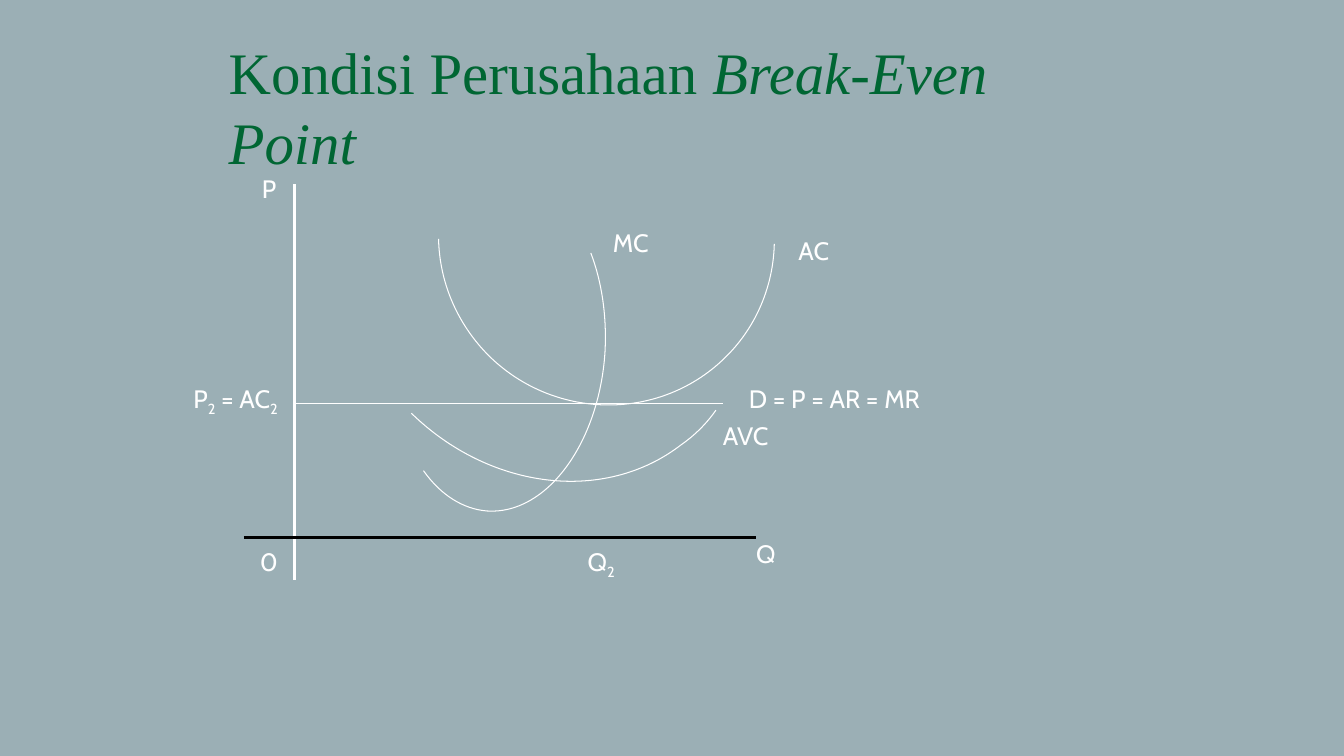
"""Draws the break-even point of a firm: cost curves, price line and axes."""
from lxml import etree
from pptx import Presentation, util as u
from pptx.dml.color import RGBColor
from pptx.enum import shapes, text
from pptx.oxml.ns import qn

WHITE = RGBColor(0xFF, 0xFF, 0xFF)
BLACK = RGBColor(0x00, 0x00, 0x00)
GREEN = RGBColor(0x00, 0x66, 0x33)
SLATE = RGBColor(0x9B, 0xAF, 0xB5)
LABEL_HEIGHT = 0.4

deck = Presentation()
deck.slide_width, deck.slide_height = u.Inches(13.33), u.Inches(7.5)
slide = deck.slides.add_slide(deck.slide_layouts[6])
slide.background.fill.solid()
slide.background.fill.fore_color.rgb = SLATE


def add_line(start, end, color, weight):
    line = slide.shapes.add_connector(
        shapes.MSO_CONNECTOR.STRAIGHT, *[u.Inches(v) for v in start + end])
    line.line.color.rgb = color
    line.line.width = u.Pt(weight)
    etree.SubElement(line._element.spPr, qn("a:effectLst"))


def add_text(left, top, width, height, parts, font, size, color):
    box = slide.shapes.add_textbox(*[u.Inches(v) for v in (left, top, width, height)])
    paragraph = box.text_frame.paragraphs[0]
    for part in parts:
        run = paragraph.add_run()
        run.text = part
        run.font.name, run.font.size = font, u.Pt(size)
        run.font.color.rgb = color
    return box.text_frame


add_line((2.92, 1.83), (2.92, 5.75), WHITE, 2.25)
add_line((2.92, 4), (7.17, 4), WHITE, 0.75)

average_cost = [(7.68, 2.42), (7.67, 2.84), (7.5, 3.24), (7.21, 3.53),
                (6.57, 4.18), (5.51, 4.18), (4.85, 3.53),
                (4.54, 3.22), (4.36, 2.81), (4.35, 2.37)]
average_variable_cost = [(7.1, 4.07), (7.01, 4.2), (6.89, 4.32), (6.76, 4.41),
                         (6, 5), (4.86, 4.86), (4.08, 4.1)]
marginal_cost = [(5.86, 2.51), (5.97, 2.8), (6.02, 3.14), (6, 3.5),
                 (5.94, 4.4), (5.42, 5.11), (4.83, 5.07),
                 (4.59, 5.05), (4.37, 4.91), (4.2, 4.67)]

for cost in (average_cost, average_variable_cost, marginal_cost):
    controls = [(u.Inches(x), u.Inches(y)) for x, y in cost]
    outline = slide.shapes.build_freeform(*controls[0])
    outline.add_line_segments(controls[1:], close=False)
    curve = outline.convert_to_shape()
    curve.shadow.inherit = False
    curve.fill.background()
    curve.line.color.rgb = WHITE
    curve.line.width = u.Pt(0.75)
    outline_path = next(curve._element.iter(qn("a:path")))
    segments = outline_path.findall(qn("a:lnTo"))
    for first in range(0, len(segments), 3):
        bezier = etree.SubElement(outline_path, qn("a:cubicBezTo"))
        for segment in segments[first:first + 3]:
            bezier.append(segment[0])
            outline_path.remove(segment)

labels = [
    (5.98, 2.21, 0.59, ["MC"]),
    (7.82, 2.29, 0.55, ["AC"]),
    (7.07, 4.12, 0.68, ["AVC"]),
    (7.33, 3.75, 2.03, ["D = P = AR = MR"]),
    (2.5, 1.67, 0.33, ["P"]),
    (2.48, 5.37, 0.34, ["0"]),
    (1.82, 3.75, 1.1, ["P", "2", " = AC", "2"]),
    (5.73, 5.37, 0.49, ["Q", "2"]),
    (7.4, 5.29, 0.41, ["Q"]),
]
for left, top, width, parts in labels:
    label = add_text(left, top, width, LABEL_HEIGHT, parts, "Cabin", 18, WHITE)
    label.word_wrap = False
    label.auto_size = text.MSO_AUTO_SIZE.SHAPE_TO_FIT_TEXT
    for subscript in label.paragraphs[0].runs[1::2]:
        subscript.font._element.set("baseline", "-25000")

title = add_text(2.17, 0.3, 9, 1.25, ["Kondisi Perusahaan ", "Break-Even Point"],
                 "Times New Roman", 42, GREEN)
title.word_wrap = True
title.paragraphs[0].runs[1].font.italic = True

add_line((2.42, 5.33), (7.5, 5.33), BLACK, 2.25)

deck.save("out.pptx")
